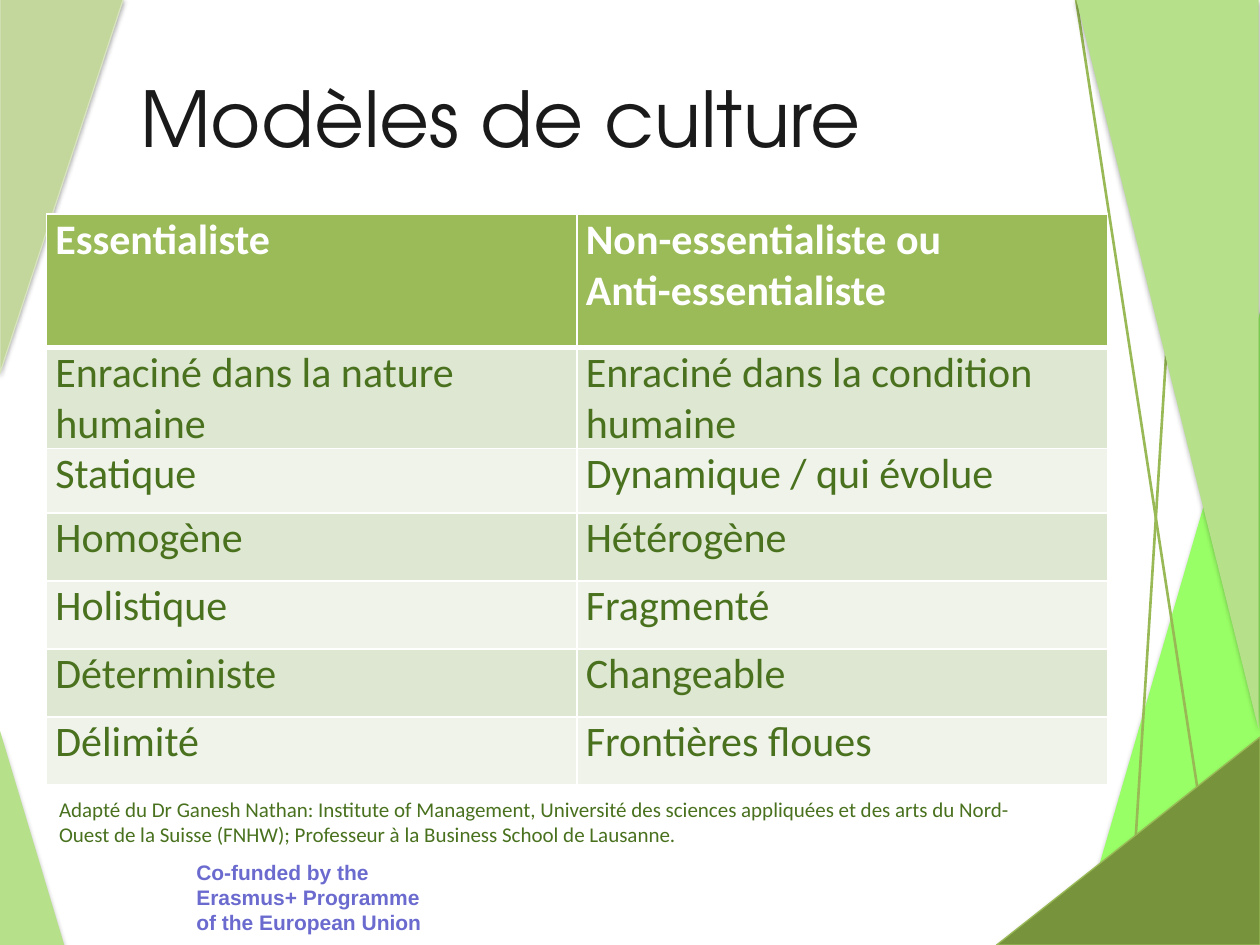
import pptx
import pptx.util
import pptx.oxml
import pptx.oxml.ns
import pptx.dml.color
import pptx.enum.shapes
import pptx.enum.text
from lxml import etree

Inches = pptx.util.Inches
Pt = pptx.util.Pt
qn = pptx.oxml.ns.qn

COLORS = {
    "white": "FFFFFF", "title": "1A1A1A", "text": "49711E", "funding": "6B6BCF",
    "lime": "99FF66", "light": "B7E08B", "sage": "C3D69B", "sage edge": "D7E4BD",
    "olive": "77933C", "line": "98B955",
    "header": "9BBB59", "odd row": "DEE7D1", "even row": "EFF3EA",
}

TITLE = "Modèles de culture"
SOURCE = ("Adapté du Dr Ganesh Nathan: Institute of Management, Université des sciences "
          "appliquées et des arts du Nord-Ouest de la Suisse (FNHW); "
          "Professeur à la Business School de Lausanne.")
FUNDING = "Co-funded by the Erasmus+ Programme of the European Union"
ROWS = [
    ("Essentialiste", "Non-essentialiste ou\nAnti-essentialiste"),
    ("Enraciné dans la nature humaine", "Enraciné dans la condition humaine"),
    ("Statique", "Dynamique / qui évolue"),
    ("Homogène", "Hétérogène"),
    ("Holistique", "Fragmenté"),
    ("Déterministe", "Changeable"),
    ("Délimité", "Frontières floues"),
]
ROW_HEIGHTS = [1.06, 0.54, 0.51, 0.54, 0.54, 0.54, 0.54]
COLUMN_WIDTH = 4.21

# left, top, width, height, flips, fill, edge
LOWER_RIGHT_TRIANGLE = (8.54, 2.41, 1.48, 5.09, "H", "lime", None)
LEFT_TRIANGLES = [
    (0, 5.8, 0.51, 1.7, "", "light", None),
    (0, -0.01, 0.98, 2.97, "V", "sage", "sage edge"),
]
RIGHT_LINES = [((8.96, 7.5), (9.3, 2.1)), ((9.65, 7.21), (8.54, -0.01))]
RIGHT_TRIANGLES = [
    (8.54, -0.01, 1.45, 5.8, "HV", "light", None),
    (7.91, 5.85, 2.09, 1.65, "H", "olive", "line"),
]


def rgb(name):
    return pptx.dml.color.RGBColor.from_string(COLORS[name])


def style_font(paragraph, name, size, color, bold=False):
    font = paragraph.font
    font.name, font.size, font.bold = name, Pt(size), bold
    font.color.rgb = rgb(color)


def add_triangle(slide, left, top, width, height, flips, fill, edge):
    shape = slide.shapes.add_shape(
        pptx.enum.shapes.MSO_SHAPE.RIGHT_TRIANGLE,
        Inches(left), Inches(top), Inches(width), Inches(height))
    shape.fill.solid()
    shape.fill.fore_color.rgb = rgb(fill)
    if edge:
        shape.line.color.rgb = rgb(edge)
        shape.line.width = Pt(0.75)
    else:
        shape.line.fill.background()
    properties = shape.element.spPr
    for axis in flips:
        properties.find(qn("a:xfrm")).set("flip" + axis, "1")
    shape.shadow.inherit = False
    shadow = etree.SubElement(
        properties.find(qn("a:effectLst")), qn("a:outerShdw"),
        blurRad=str(Pt(3.1)), dist=str(Pt(1.7)), dir="5400000", rotWithShape="0")
    color = etree.SubElement(shadow, qn("a:srgbClr"), val="000000")
    etree.SubElement(color, qn("a:alpha"), val="35000")


def add_line(slide, start, end):
    line = slide.shapes.add_connector(
        pptx.enum.shapes.MSO_CONNECTOR.STRAIGHT, *map(Inches, start + end))
    line.line.color.rgb = rgb("line")
    line.line.width = Pt(1.5)
    etree.SubElement(line.element.spPr, qn("a:effectLst"))


def add_text(slide, text, left, top, width, height, font, color, bold=False):
    box = slide.shapes.add_textbox(Inches(left), Inches(top), Inches(width), Inches(height))
    box.text_frame.word_wrap = True
    box.text_frame.text = text
    style_font(box.text_frame.paragraphs[0], font, 12, color, bold)


def set_borders(cell, bottom_width):
    """Draw white cell borders; call before the fill, which must follow them."""
    properties = cell._tc.get_or_add_tcPr()
    for side, width in (("L", 1), ("R", 1), ("T", 1), ("B", bottom_width)):
        border = etree.SubElement(properties, qn("a:ln" + side), w=str(Pt(width)))
        fill = etree.SubElement(border, qn("a:solidFill"))
        etree.SubElement(fill, qn("a:srgbClr"), val=COLORS["white"])


def add_comparison_table(slide):
    table = slide.shapes.add_table(
        len(ROWS), 2, Inches(0.37), Inches(1.7),
        Inches(2 * COLUMN_WIDTH), Inches(sum(ROW_HEIGHTS))).table
    for column in table.columns:
        column.width = Inches(COLUMN_WIDTH)
    for index, (texts, height) in enumerate(zip(ROWS, ROW_HEIGHTS)):
        header = index == 0
        fill = "header" if header else "odd row" if index % 2 else "even row"
        table.rows[index].height = Inches(height)
        for cell, text in zip(table.rows[index].cells, texts):
            cell.margin_left = cell.margin_right = Inches(0.07)
            cell.margin_top = cell.margin_bottom = 0
            set_borders(cell, 3 if header else 1)
            cell.fill.solid()
            cell.fill.fore_color.rgb = rgb(fill)
            cell.text_frame.text = text
            for paragraph in cell.text_frame.paragraphs:
                style_font(paragraph, "Calibri", 24, "white" if header else "text", header)


def add_title(slide):
    title = slide.shapes.title
    title.left, title.top = Inches(0.74), Inches(0.3)
    title.width, title.height = Inches(6.47), Inches(1.25)
    title.text_frame.text = TITLE
    title.text_frame.vertical_anchor = pptx.enum.text.MSO_ANCHOR.MIDDLE
    paragraph = title.text_frame.paragraphs[0]
    paragraph.alignment = pptx.enum.text.PP_ALIGN.CENTER
    style_font(paragraph, "TeX Gyre Adventor", 44, "title")


def main():
    presentation = pptx.Presentation()
    presentation.slide_width, presentation.slide_height = Inches(10), Inches(7.5)
    slide = presentation.slides.add_slide(presentation.slide_layouts[5])
    add_title(slide)
    add_triangle(slide, *LOWER_RIGHT_TRIANGLE)
    add_text(slide, FUNDING, 1.46, 6.77, 2, 0.71, "Arial", "funding", bold=True)
    for triangle in LEFT_TRIANGLES:
        add_triangle(slide, *triangle)
    for start, end in RIGHT_LINES:
        add_line(slide, start, end)
    for triangle in RIGHT_TRIANGLES:
        add_triangle(slide, *triangle)
    add_text(slide, SOURCE, 0.37, 6.27, 8.02, 0.5, "Calibri", "text")
    add_comparison_table(slide)
    presentation.save("out.pptx")


if __name__ == "__main__":
    main()
